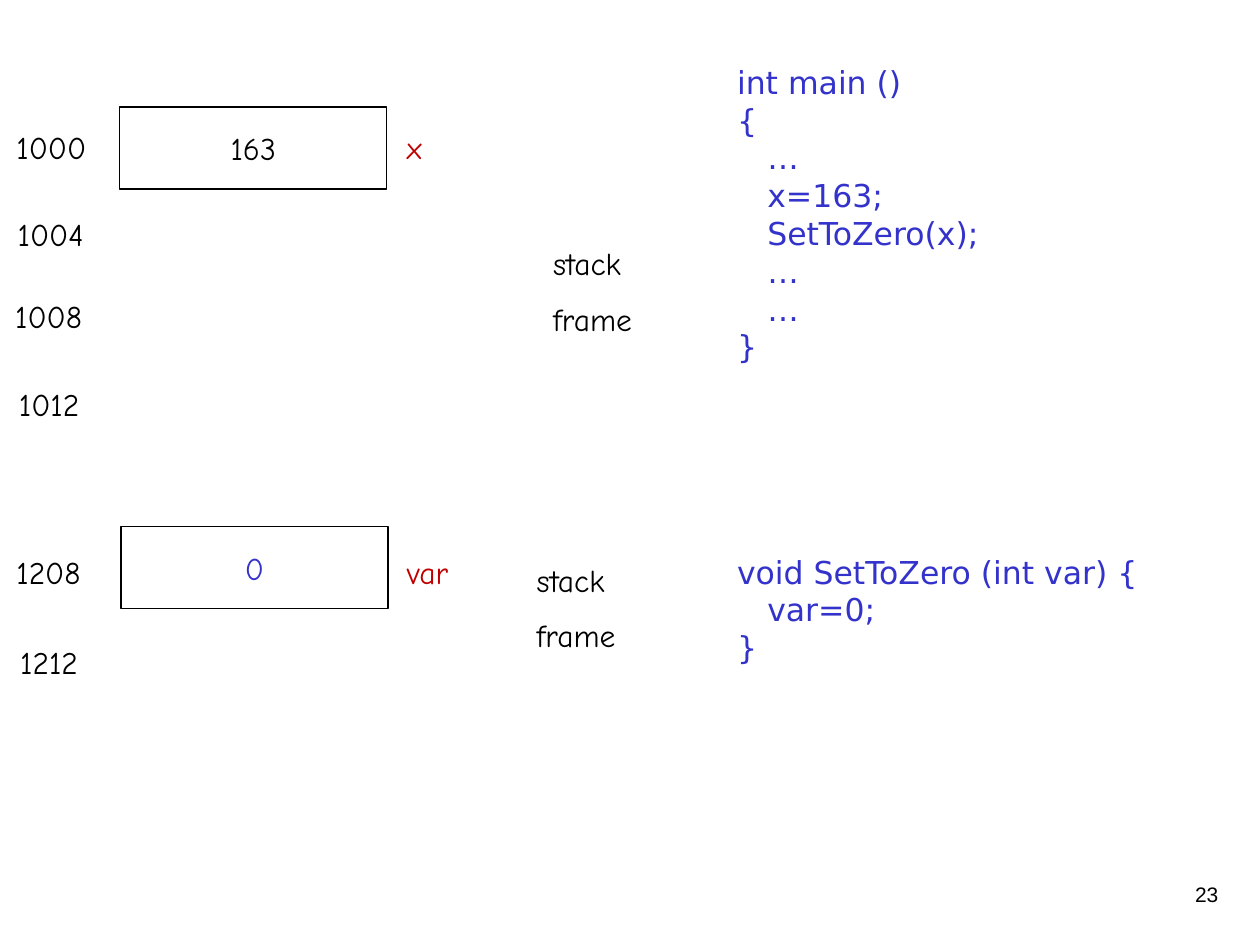
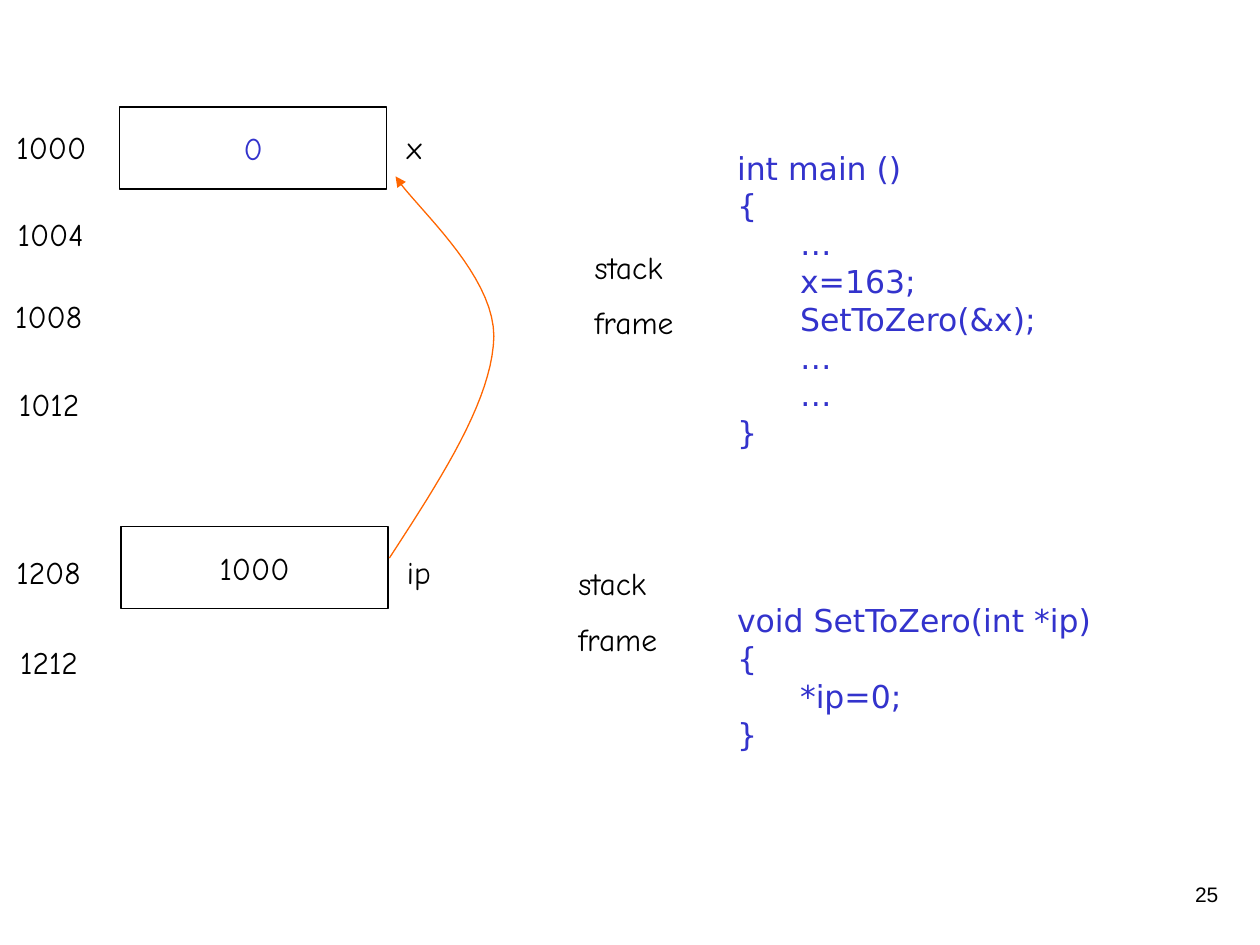
from lxml.etree import SubElement
from pptx import Presentation
from pptx.dml.color import RGBColor
from pptx.enum.shapes import MSO_SHAPE
from pptx.enum.text import MSO_ANCHOR, MSO_AUTO_SIZE, PP_ALIGN
from pptx.oxml.ns import qn
from pptx.util import Inches, Pt

COLORS = {"ink": "000000", "code": "3333CC", "name": "C00000", "pointer": "FF6600"}
HAND, CODE, NUMBER = "Comic Neue", "DejaVu Sans", "Arial"

ADDRESSES = [
    ("1000", 0.08, 0.97), ("1004", 0.09, 1.66), ("1008", 0.07, 2.31),
    ("1012", 0.10, 3.01), ("1208", 0.08, 4.34), ("1212", 0.11, 5.05),
]
CELL_SIZE = (2.12, 0.65)
CELL_CORNERS = [(0.95, 0.85), (0.96, 4.18)]
NAME_TOPS = [0.97, 4.34]

# Code lines starting with a tab are indented; "gap" is the space between functions in points.
SLIDES = [
    {
        "number": "23",
        "values": [("163", "ink"), ("0", "code")],
        "names": ["x", "var"],
        "name_color": "name",
        "frames": [(4.34, 1.89), (4.21, 4.40)],
        "code_top": 0.45,
        "indent": 0.24,
        "gap": 107,
        "functions": [
            ["int main ()", "{", "\t…", "\tx=163;", "\tSetToZero(x);", "\t…", "\t…", "}"],
            ["void SetToZero (int var) {", "\tvar=0;", "}"],
        ],
        "pointer": [],
    },
    {
        "number": "25",
        "values": [("0", "code"), ("1000", "ink")],
        "names": ["x", "ip"],
        "name_color": "ink",
        "frames": [(4.67, 1.92), (4.54, 4.43)],
        "code_top": 1.13,
        "indent": 0.5,
        "gap": 86,
        "functions": [
            ["int main ()", "{", "\t…", "\tx=163;", "\tSetToZero(&x);", "\t…", "\t…", "}"],
            ["void SetToZero(int *ip)", "{", "\t*ip=0;", "}"],
        ],
        "pointer": [
            [(3.09, 4.43), (3.5, 3.8), (3.91, 3.17), (3.92, 2.67)],
            [(3.92, 2.67), (3.92, 2.16), (3.26, 1.61), (3.14, 1.4)],
        ],
    },
]


def rgb(color):
    return RGBColor.from_string(COLORS[color])


def add_text(slide, lines, left, top, width, height, *, font=HAND, size=18, color="ink",
             align=PP_ALIGN.LEFT, anchor=MSO_ANCHOR.TOP, inset=0.05, before=10,
             wrap=True, grow=True):
    box = slide.shapes.add_textbox(*map(Inches, (left, top, width, height)))
    frame = box.text_frame
    frame.word_wrap = wrap
    frame.auto_size = MSO_AUTO_SIZE.SHAPE_TO_FIT_TEXT if grow else MSO_AUTO_SIZE.NONE
    frame.vertical_anchor = anchor
    frame.margin_left = frame.margin_right = Inches(inset)
    frame.margin_top = frame.margin_bottom = Inches(inset)
    for index, line in enumerate(lines):
        paragraph = frame.paragraphs[0] if index == 0 else frame.add_paragraph()
        paragraph.alignment = align
        paragraph.space_before = Pt(before)
        run = paragraph.add_run()
        run.text = line
        run.font.name = font
        run.font.size = Pt(size)
        run.font.color.rgb = rgb(color)
    return frame


def add_memory_cell(slide, corner, value, color):
    left, top = corner
    width, height = CELL_SIZE
    cell = slide.shapes.add_shape(MSO_SHAPE.RECTANGLE,
                                  *map(Inches, (left, top, width, height)))
    cell.shadow.inherit = False
    cell.fill.background()
    cell.line.color.rgb = rgb("ink")
    cell.line.width = Pt(0.75)
    value_width = 0.13 + 0.14 * len(value)
    add_text(slide, [value], left + (width - value_width) / 2, top + 0.1, value_width, 0.45,
             color=color, align=PP_ALIGN.CENTER, anchor=MSO_ANCHOR.MIDDLE,
             inset=0, before=0, wrap=False)


def add_code(slide, functions, top, indent, gap):
    lines = [line for function in functions for line in function]
    frame = add_text(slide, [line.strip() for line in lines], 5.8, top, 3.37, 5.6,
                     font=CODE, color="code", before=0)
    for paragraph, line in zip(frame.paragraphs, lines):
        if line.startswith("\t"):
            properties = paragraph._p.get_or_add_pPr()
            properties.set("marL", str(Inches(indent)))
            properties.set("indent", "0")
    frame.paragraphs[len(functions[0])].space_before = Pt(gap)


def bezier_point(curve, t):
    weights = ((1 - t) ** 3, 3 * t * (1 - t) ** 2, 3 * t ** 2 * (1 - t), t ** 3)
    return tuple(Inches(sum(w * point[axis] for w, point in zip(weights, curve)))
                 for axis in (0, 1))


def add_pointer(slide, curves, steps=20):
    points = [bezier_point(curve, step / steps)
              for curve in curves for step in range(1, steps + 1)]
    builder = slide.shapes.build_freeform(*bezier_point(curves[0], 0))
    builder.add_line_segments(points, close=False)
    pointer = builder.convert_to_shape()
    pointer.shadow.inherit = False
    pointer.fill.background()
    pointer.line.color.rgb = rgb("pointer")
    pointer.line.width = Pt(0.75)
    SubElement(pointer.line._get_or_add_ln(), qn("a:tailEnd"), type="triangle")


def build_slide(presentation, content):
    slide = presentation.slides.add_slide(presentation.slide_layouts[6])
    add_text(slide, [content["number"]], 8.93, 7, 0.74, 0.29, font=NUMBER, size=12,
             align=PP_ALIGN.RIGHT, inset=0, before=0, grow=False)
    for corner, (value, color) in zip(CELL_CORNERS, content["values"]):
        add_memory_cell(slide, corner, value, color)
    for address, left, top in ADDRESSES:
        add_text(slide, [address], left, top, 0.77, 0.45)
    for name, top in zip(content["names"], NAME_TOPS):
        add_text(slide, [name], 3.18, top, 0.77, 0.45, color=content["name_color"])
    add_code(slide, content["functions"], content["code_top"], content["indent"],
             content["gap"])
    for left, top in content["frames"]:
        add_text(slide, ["stack", "frame"], left, top, 1.2, 0.94)
    if content["pointer"]:
        add_pointer(slide, content["pointer"])


def main():
    presentation = Presentation()
    presentation.slide_width = Inches(10)
    presentation.slide_height = Inches(7.5)
    for content in SLIDES:
        build_slide(presentation, content)
    presentation.save("out.pptx")


if __name__ == "__main__":
    main()
